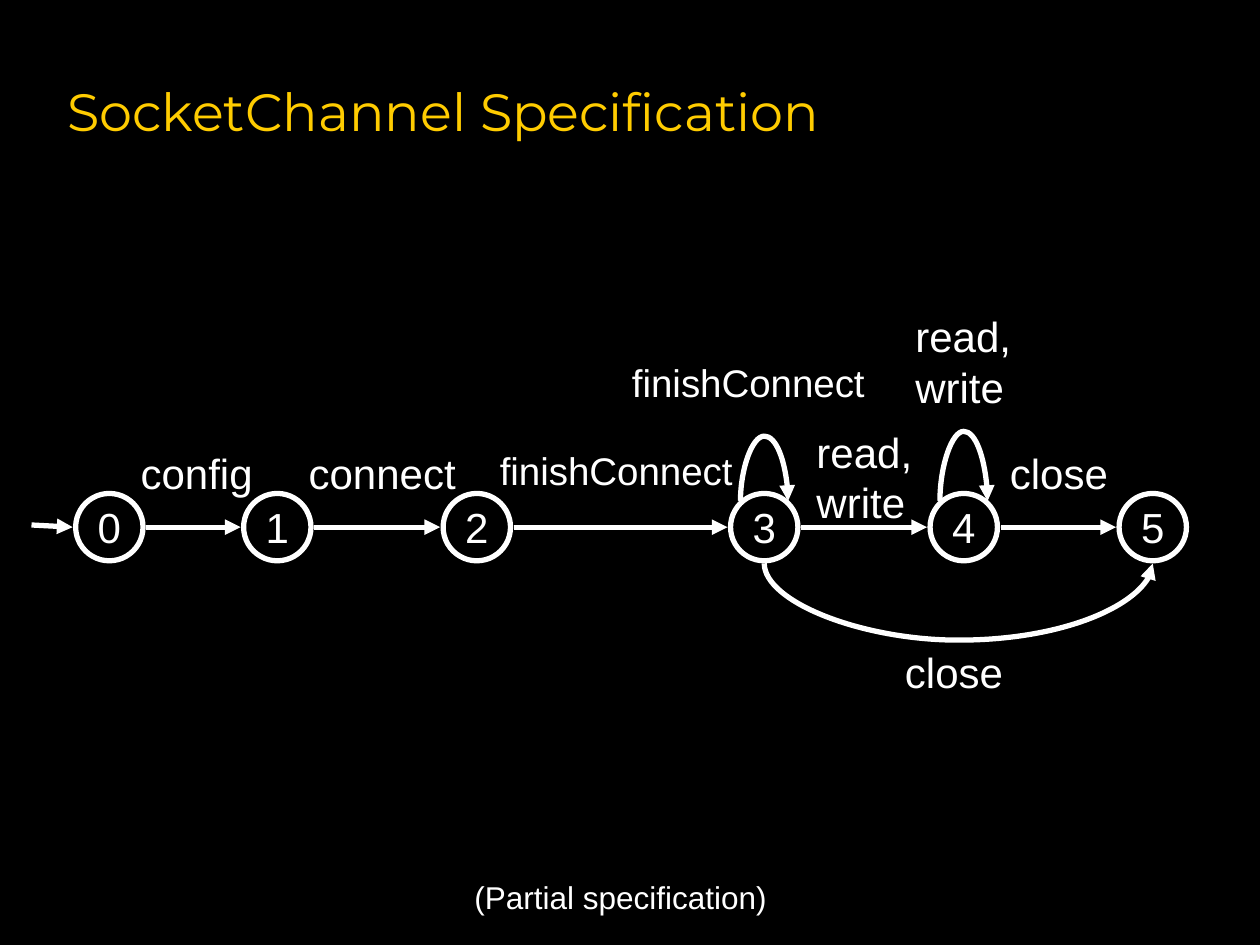
from lxml import etree
from pptx import Presentation
from pptx.dml.color import RGBColor
from pptx.enum.shapes import MSO_CONNECTOR, MSO_SHAPE
from pptx.enum.text import MSO_ANCHOR, MSO_AUTO_SIZE, PP_ALIGN
from pptx.oxml.ns import qn
from pptx.util import Pt

LINE, CURVE = MSO_CONNECTOR.STRAIGHT, MSO_CONNECTOR.CURVE
OVAL = MSO_SHAPE.OVAL
TOP, MIDDLE = MSO_ANCHOR.TOP, MSO_ANCHOR.MIDDLE
LEFT, CENTER = PP_ALIGN.LEFT, PP_ALIGN.CENTER
GROW = MSO_AUTO_SIZE.SHAPE_TO_FIT_TEXT

WHITE, GOLD, BLACK = "FFFFFF", "FFCC00", "000000"
BODY = {"name": "Arial", "size": Pt(24)}
HEAD = {"name": "Montserrat", "size": Pt(30)}

TITLE = ("SocketChannel Specification", 31.5, 18, 612, 90)
# States: label and centre x, all on one row
STATES = {"0": 62.5, "1": 158.5, "2": 272.5, "3": 436.75, "4": 550.75, "5": 658.75}
ROW, RADIUS, REACH = 301.25, 19.25, 21
# Labels: text, left, top, width, height, size
LABELS = [
    ("config", 73.25, 252, 78.5, 36, 24),
    ("connect", 169.25, 252, 98.5, 36, 24),
    ("finishConnect", 278.5, 252, 147.5, 34, 22),
    ("finishConnect", 354, 201.75, 147.5, 34, 22),
    ("read,\nwrite", 459.5, 240, 69, 65, 24),
    ("read,\nwrite", 516, 174, 69, 65, 24),
    ("close", 570, 252, 70.5, 36, 24),
    ("close", 510, 366, 70.5, 36, 24),
    ("(Partial specification)", 264, 498, 181.5, 29, 18),
]
# Curves: from x, to x, y, bulge (negative is upward)
SIDE = 13.6
CURVES = [
    (STATES["3"] - SIDE, STATES["3"] + SIDE, 286.25, -40.75),
    (STATES["4"] - SIDE, STATES["4"] + SIDE, 286.25, -43.75),
    (STATES["3"], STATES["5"], 322, 48.4),
]
THIN = 0.125  # depth of a curve's frame


def color(code):
    return RGBColor.from_string(code)


def write(shape, text, form, tint=WHITE, align=LEFT, anchor=TOP, wrap=False):
    frame = shape.text_frame
    frame.word_wrap, frame.vertical_anchor = wrap, anchor
    for i, line in enumerate(text.split("\n")):
        para = frame.add_paragraph() if i else frame.paragraphs[0]
        para.alignment = align
        run = para.add_run()
        run.text = line
        for key, value in form.items():
            setattr(run.font, key, value)
        run.font.color.rgb = color(tint)
    return frame


def stroke(shape):
    shape.line.color.rgb = color(WHITE)
    shape.line.width = Pt(3)


def arrow(kind, x1, y1, x2, y2):
    link = slide.shapes.add_connector(kind, Pt(x1), Pt(y1), Pt(x2), Pt(y2))
    stroke(link)
    etree.SubElement(link.line._get_or_add_ln(), qn("a:tailEnd"), type="triangle")
    etree.SubElement(link._element.spPr, qn("a:effectLst"))
    return link


def arc(x1, x2, y, bulge):
    # An upright frame turned a quarter, so that the curve bulges up or down
    mid, half = (x1 + x2) / 2, (x2 - x1) / 2
    link = arrow(CURVE, mid - THIN / 2, y - half, mid + THIN / 2, y + half)
    props = link._element.spPr
    turn, flip = (90, "flipV") if bulge < 0 else (270, "flipH")
    frame = props.find(qn("a:xfrm"))
    frame.set("rot", str(turn * 60000))
    frame.set(flip, "1")
    guides = props.find(qn("a:prstGeom")).find(qn("a:avLst"))
    ratio = round(bulge / THIN * 100000)
    etree.SubElement(guides, qn("a:gd"), name="adj1", fmla=f"val {ratio}")


deck = Presentation()
deck.slide_width, deck.slide_height = Pt(720), Pt(540)
slide = deck.slides.add_slide(deck.slide_layouts[6])
slide.background.fill.solid()
slide.background.fill.fore_color.rgb = color(BLACK)

# Title
text, *place = TITLE
box = slide.shapes.add_textbox(*map(Pt, place))
write(box, text, HEAD, GOLD, anchor=MIDDLE, wrap=True)

# Labels
for text, *place, size in LABELS:
    box = slide.shapes.add_textbox(*map(Pt, place))
    write(box, text, BODY | {"size": Pt(size)}).auto_size = GROW

# States
for name, x in STATES.items():
    node = slide.shapes.add_shape(
        OVAL, Pt(x - RADIUS), Pt(ROW - RADIUS), Pt(2 * RADIUS), Pt(2 * RADIUS))
    node.shadow.inherit = False
    node.fill.background()
    stroke(node)
    write(node, name, BODY, align=CENTER, anchor=MIDDLE)

# Straight arrows: entry, then state to state
spots = list(STATES.values())
arrow(LINE, 18, 300, spots[0] - REACH, ROW)
for a, b in zip(spots, spots[1:]):
    arrow(LINE, a + REACH, ROW, b - REACH, ROW)

# Curved arrows
for curve in CURVES:
    arc(*curve)

deck.save("out.pptx")
